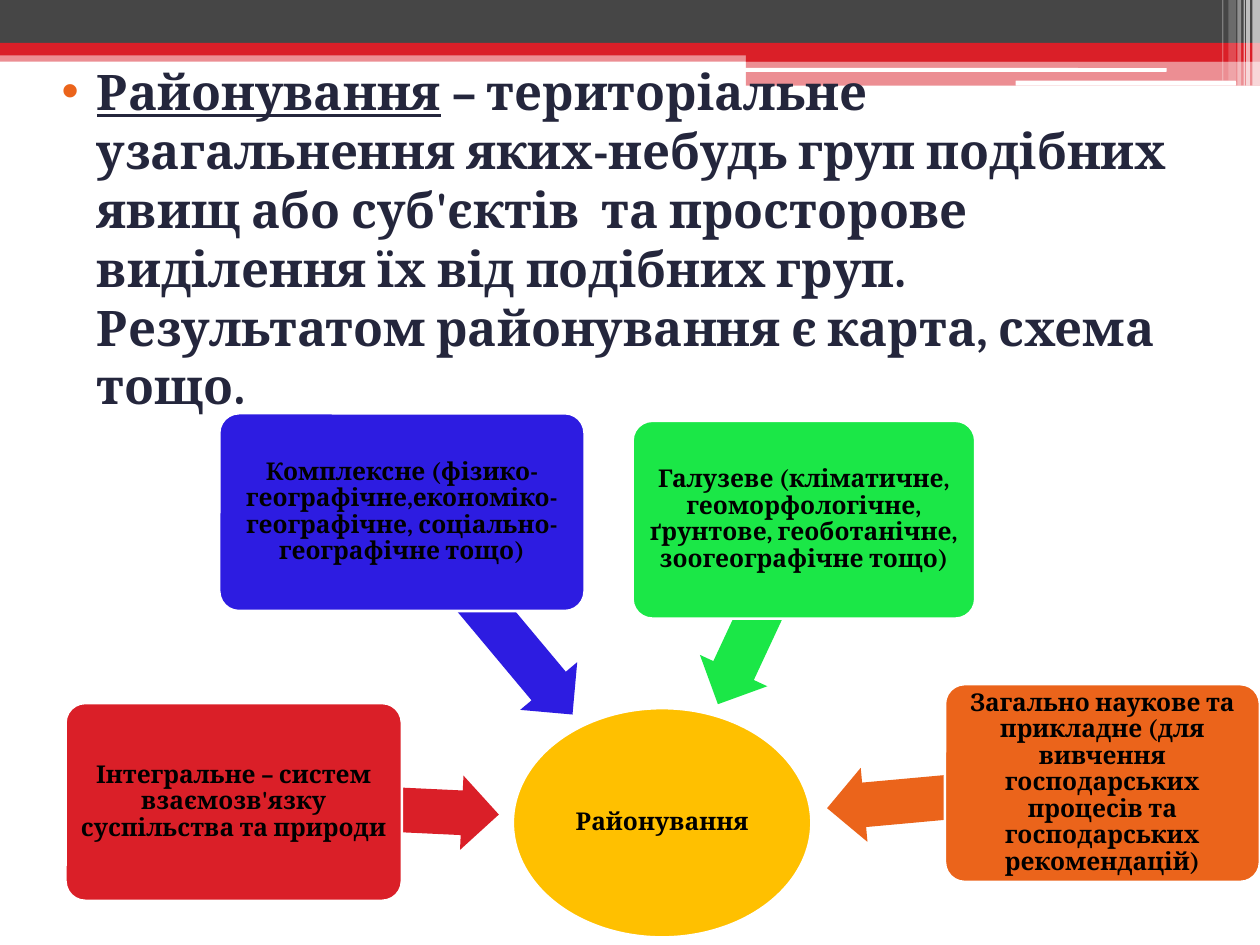
"""Build the slide on kinds of regional zoning with a radial diagram."""
from dataclasses import dataclass
from typing import Any

from lxml import etree
from pptx import Presentation
from pptx import util as u
from pptx.dml.color import RGBColor
from pptx.enum import shapes, text
from pptx.oxml import ns

RED = RGBColor(0xDA, 0x1F, 0x28)
GRAY = RGBColor(0x46, 0x46, 0x46)
WHITE = RGBColor(0xFF, 0xFF, 0xFF)
BLACK = RGBColor(0, 0, 0)
INK = RGBColor(0x24, 0x26, 0x3C)
GOLD = RGBColor(0xFF, 0xC0, 0x00)
BLUE = RGBColor(0x2D, 0x1C, 0xE1)
GREEN = RGBColor(0x1B, 0xE7, 0x47)
ORANGE = RGBColor(0xEB, 0x64, 0x1B)
KIND = shapes.MSO_SHAPE

BANDS = [
    ((0, 0.4, 10, 0.09), RED, 50),
    ((0, 0, 10, 0.34), GRAY, 100),
    ((0, 0.34, 10, 0.1), RED, 100),
    ((5.92, 0.39, 4.08, 0.1), RED, 100),
    ((5.92, 0.48, 4.08, 0.2), RED, 50),
]
HIGHLIGHTS = [(5.91, 0.54, 3.35, 0.03), (8.06, 0.64, 1.75, 0.04)]
STRIPES = [
    (9.94, 0.06, 0.68, 65),
    (9.89, 0.03, 0.68, 65),
    (9.87, 0.01, 0.68, 60),
    (9.82, 0.03, 0.68, 40),
    (9.75, 0.06, 0.64, 20),
    (9.7, 0.01, 0.64, 30),
]
BRANCHES = [
    (RED, (1.86, 6.12, 2.1), 182.7, (0.52, 5.58, 2.67),
     "Інтегральне – систем взаємозв'язку суспільства та природи"),
    (BLUE, (2.82, 4.57, 2.1), 230.1, (1.74, 3.28, 2.9),
     "Комплексне (фізико-географічне,економіко-географічне, "
     "соціально-географічне тощо)"),
    (GREEN, (5.23, 4.56, 1.62), 295, (5.02, 3.34, 2.72),
     "Галузеве (кліматичне, геоморфологічне, ґрунтове, геоботанічне, "
     "зоогеографічне тощо)"),
    (ORANGE, (6.56, 6.02, 2.19), 354.8, (7.5, 5.43, 2.5),
     "Загально наукове та прикладне (для вивчення господарських процесів "
     "та господарських рекомендацій)"),
]
ARROW_HEIGHT = 0.59
BOX_HEIGHT = 1.57
TERM = "Районування"
DEFINITION = (
    " – територіальне узагальнення яких-небудь груп подібних явищ або "
    "суб'єктів  та просторове виділення їх від подібних груп. "
    "Результатом районування є карта, схема тощо."
)


def add_run(p, words, size=14, color=BLACK, underline=False, font="Cambria"):
    r = p.add_run()
    r.text = words
    r.font.name = font
    r.font.size = u.Pt(size)
    r.font.bold = True
    r.font.underline = underline
    r.font.color.rgb = color


def set_insets(tf, inset):
    tf.margin_left = tf.margin_right = u.Inches(inset)
    tf.margin_top = tf.margin_bottom = u.Inches(inset)


@dataclass
class Painter:
    s: Any
    outline: RGBColor = WHITE
    outline_width: float = 1.5

    def shape(self, kind, box, color, opacity=100, adjustments=(), angle=0):
        sp = self.s.shapes.add_shape(kind, *map(u.Inches, box))
        sp.shadow.inherit = False
        sp.fill.solid()
        sp.fill.fore_color.rgb = color
        sp.line.fill.background()
        sp.rotation = angle
        for i, value in enumerate(adjustments):
            sp.adjustments[i] = value
        if opacity < 100:
            clr = sp.fill._xPr.find(".//" + ns.qn("a:srgbClr"))
            etree.SubElement(clr, ns.qn("a:alpha"), val=str(opacity * 1000))
        return sp

    def node(self, kind, box, color, words, inset, adjustments=()):
        sp = self.shape(kind, box, color, adjustments=adjustments)
        sp.line.color.rgb = self.outline
        sp.line.width = u.Pt(self.outline_width)
        tf = sp.text_frame
        tf.word_wrap = True
        tf.vertical_anchor = text.MSO_ANCHOR.MIDDLE
        set_insets(tf, inset)
        p = tf.paragraphs[0]
        p.alignment = text.PP_ALIGN.CENTER
        p.line_spacing = 0.9
        add_run(p, words)

    def arrow(self, box, color, angle):
        self.shape(KIND.LEFT_ARROW, box, color, adjustments=(0.6, 0.5), angle=angle)

    def definition(self, box, term, words):
        tf = self.s.shapes.add_textbox(*map(u.Inches, box)).text_frame
        tf.word_wrap = True
        p = tf.paragraphs[0]
        p.space_before = u.Pt(3)
        pPr = p._p.get_or_add_pPr()
        pPr.set("marL", str(u.Inches(0.4)))
        pPr.set("indent", str(u.Inches(-0.28)))
        clr = etree.SubElement(pPr, ns.qn("a:buClr"))
        etree.SubElement(clr, ns.qn("a:srgbClr"), val=str(ORANGE))
        etree.SubElement(pPr, ns.qn("a:buFont"), typeface="Arial")
        etree.SubElement(pPr, ns.qn("a:buChar"), char="•")
        add_run(p, term, size=28, color=INK, underline=True)
        add_run(p, words, size=28, color=INK)


def main():
    prs = Presentation()
    prs.slide_width, prs.slide_height = u.Inches(10), u.Inches(7.5)
    painter = Painter(prs.slides.add_slide(prs.slide_layouts[6]))

    for box, color, opacity in BANDS:
        painter.shape(KIND.RECTANGLE, box, color, opacity)
    for box in HIGHLIGHTS:
        painter.shape(KIND.ROUNDED_RECTANGLE, box, WHITE)
    for left, width, height, opacity in STRIPES:
        painter.shape(KIND.RECTANGLE, (left, 0, width, height), WHITE, opacity)

    painter.definition((0.27, 0.44, 9.45, 6.75), TERM, DEFINITION)
    painter.node(KIND.OVAL, (4.07, 5.62, 2.37, 1.82), GOLD, TERM, 0.01)
    for color, arrow, angle, box, words in BRANCHES:
        painter.arrow((*arrow, ARROW_HEIGHT), color, angle)
        painter.node(KIND.ROUNDED_RECTANGLE, (*box, BOX_HEIGHT), color, words,
                     0.03, adjustments=(0.1,))

    prs.save("out.pptx")


if __name__ == "__main__":
    main()
